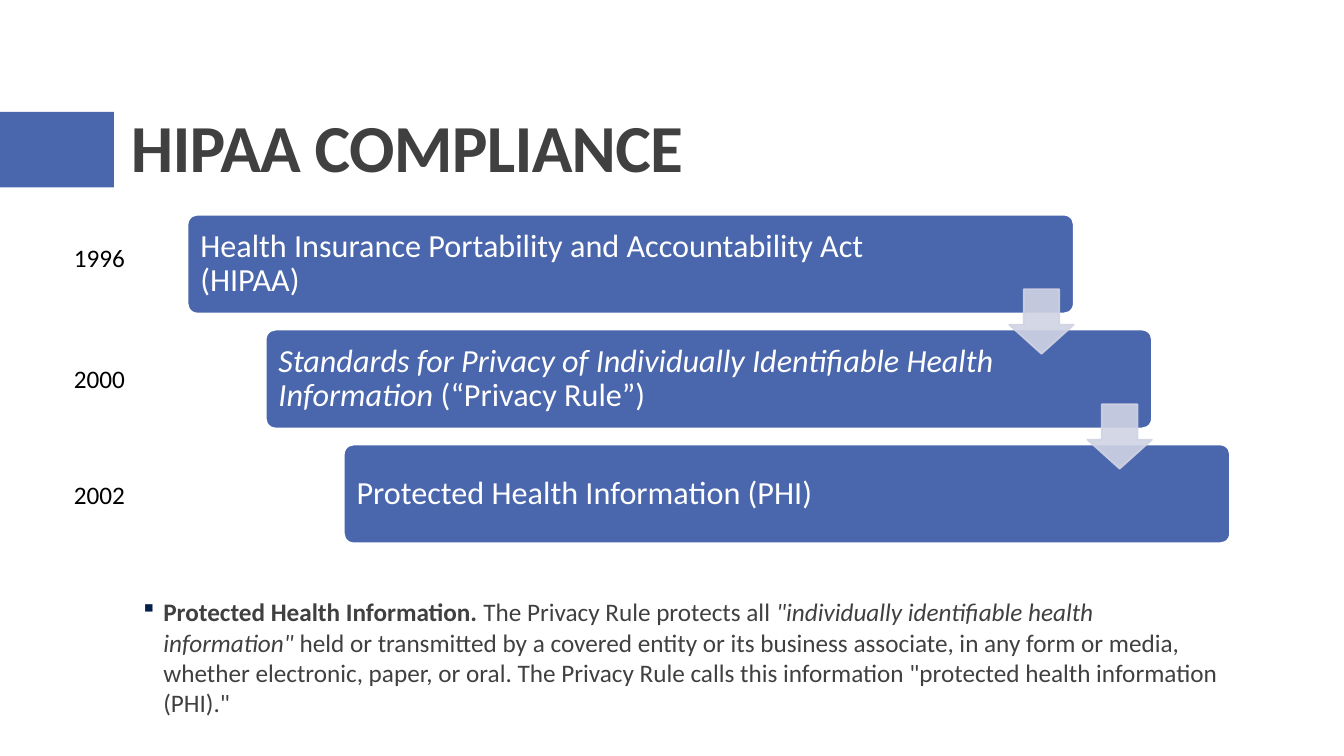
import pptx
import pptx.dml.color
import pptx.enum.shapes
import pptx.enum.text
import pptx.oxml
import pptx.oxml.ns
import pptx.util

Inches = pptx.util.Inches
Pt = pptx.util.Pt
RGBColor = pptx.dml.color.RGBColor
MSO_SHAPE = pptx.enum.shapes.MSO_SHAPE
MSO_ANCHOR = pptx.enum.text.MSO_ANCHOR
PP_ALIGN = pptx.enum.text.PP_ALIGN
qn = pptx.oxml.ns.qn

BLUE = RGBColor(0x4A, 0x66, 0xAC)
PALE = RGBColor(0xD0, 0xD3, 0xE3)
DARK = RGBColor(0x40, 0x40, 0x40)
BLACK = RGBColor(0, 0, 0)
WHITE = RGBColor(0xFF, 0xFF, 0xFF)
NAVY = RGBColor(0x05, 0x20, 0x4A)
FONT = "Calibri"

# Each run is (text, style), where the style holds "b" for bold and "i" for italic.
STEPS = [
    [("Health Insurance Portability and Accountability Act (HIPAA)", "")],
    [("Standards for Privacy of Individually Identifiable Health Information", "i"),
     (" (“Privacy Rule”)", "")],
    [("Protected Health Information (PHI)", "")],
]
YEARS = [("1996", 2.35), ("2000", 3.56), ("2002", 4.71)]
DEFINITION = [
    ("Protected Health Information.", "b"),
    (" The Privacy Rule protects all ", ""),
    ('"individually identifiable health information"', "i"),
    (" held or transmitted by a covered entity or its business associate, in any form "
     "or media, whether electronic, paper, or oral. The Privacy Rule calls this "
     'information "protected health information (PHI)."', ""),
]


def add_runs(p, runs, size, color):
    for text, style in runs:
        r = p.add_run()
        r.text = text
        r.font.name = FONT
        r.font.size = Pt(size)
        r.font.color.rgb = color
        r.font.bold = "b" in style
        r.font.italic = "i" in style


def add_block(s, kind, x, y, w, h, fill, line=None):
    sp = s.shapes.add_shape(kind, Inches(x), Inches(y), Inches(w), Inches(h))
    sp.shadow.inherit = False
    sp.fill.solid()
    sp.fill.fore_color.rgb = fill
    if line is None:
        sp.line.fill.background()
    else:
        sp.line.color.rgb = line
        sp.line.width = Pt(1.25)
    return sp


def add_text(s, x, y, w, h, runs, size, color):
    sp = s.shapes.add_textbox(Inches(x), Inches(y), Inches(w), Inches(h))
    tf = sp.text_frame
    tf.word_wrap = True
    add_runs(tf.paragraphs[0], runs, size, color)
    return tf


def add_title(s, x, y, w, h):
    add_block(s, MSO_SHAPE.RECTANGLE, 0, y + 0.8, 1.13, 0.75, BLUE)
    tf = add_text(s, x, y, w, h, [("HIPAA COMPLIANCE", "b")], 48, DARK)
    tf.vertical_anchor = MSO_ANCHOR.BOTTOM
    p = tf.paragraphs[0]
    p.line_spacing = 0.9
    p.runs[0].font._element.set("spc", "-50")


def add_step(s, x, y, w, h, runs):
    sp = add_block(s, MSO_SHAPE.ROUNDED_RECTANGLE, x, y, w, h, BLUE, WHITE)
    sp.adjustments[0] = 0.1
    tf = sp.text_frame
    tf.word_wrap = True
    tf.vertical_anchor = MSO_ANCHOR.MIDDLE
    tf.margin_left = Inches(0.1)
    tf.margin_right = Inches(1.5)
    p = tf.paragraphs[0]
    p.alignment = PP_ALIGN.LEFT
    p.line_spacing = 0.9
    add_runs(p, runs, 23, WHITE)


def add_step_arrow(s, x, y, size):
    sp = add_block(s, MSO_SHAPE.DOWN_ARROW, x, y, size, size, PALE, PALE)
    sp.adjustments[0] = 0.55
    sp.adjustments[1] = 0.45
    for color in sp._element.spPr.iter(qn("a:srgbClr")):
        color.append(pptx.oxml.parse_xml(
            f'<a:alpha {pptx.oxml.ns.nsdecls("a")} val="90000"/>'))


def add_staircase(s, x, y, w, h):
    """Place the steps from top left to bottom right, with arrows between them."""
    step_w, step_h, arrow = 8.79, 0.98, 0.64
    gaps = len(STEPS) - 1
    dx, dy = (w - step_w) / gaps, (h - step_h) / gaps
    for i, runs in enumerate(STEPS):
        add_step(s, x + i * dx, y + i * dy, step_w, step_h, runs)
    for i in range(gaps):
        add_step_arrow(s, x + i * dx + step_w - arrow, y + i * dy + 0.74, arrow)


def add_years(s, x, w, h):
    for year, y in YEARS:
        tf = add_text(s, x, y, w, h, [(year, "")], 18, BLACK)
        tf.paragraphs[0].alignment = PP_ALIGN.CENTER


def add_definition(s, x, y, w, h):
    tf = add_text(s, x, y, w, h, DEFINITION, 18, DARK)
    tf.margin_left = 0
    tf.margin_right = Inches(0.1)
    p = tf.paragraphs[0]
    p.space_before = p.space_after = Pt(6)
    pPr = p._p.get_or_add_pPr()
    pPr.set("marL", str(Inches(0.42)))
    pPr.set("indent", str(Inches(-0.2)))
    ns = pptx.oxml.ns.nsdecls("a")
    for xml in (f'<a:buClr {ns}><a:srgbClr val="{NAVY}"/></a:buClr>',
                f'<a:buFont {ns} typeface="Wingdings" pitchFamily="2" charset="2"/>',
                f'<a:buChar {ns} char="§"/>'):
        pPr.append(pptx.oxml.parse_xml(xml))


def main():
    prs = pptx.Presentation()
    prs.slide_width = Inches(13.33)
    prs.slide_height = Inches(7.5)
    s = prs.slides.add_slide(prs.slide_layouts[6])
    add_title(s, 1.2, 0.31, 11, 1.59)
    add_definition(s, 1.2, 5.87, 11, 1.47)
    add_staircase(s, 1.86, 2.13, 10.34, 3.26)
    add_years(s, 0.39, 1.19, 0.4)
    prs.save("out.pptx")


if __name__ == "__main__":
    main()
